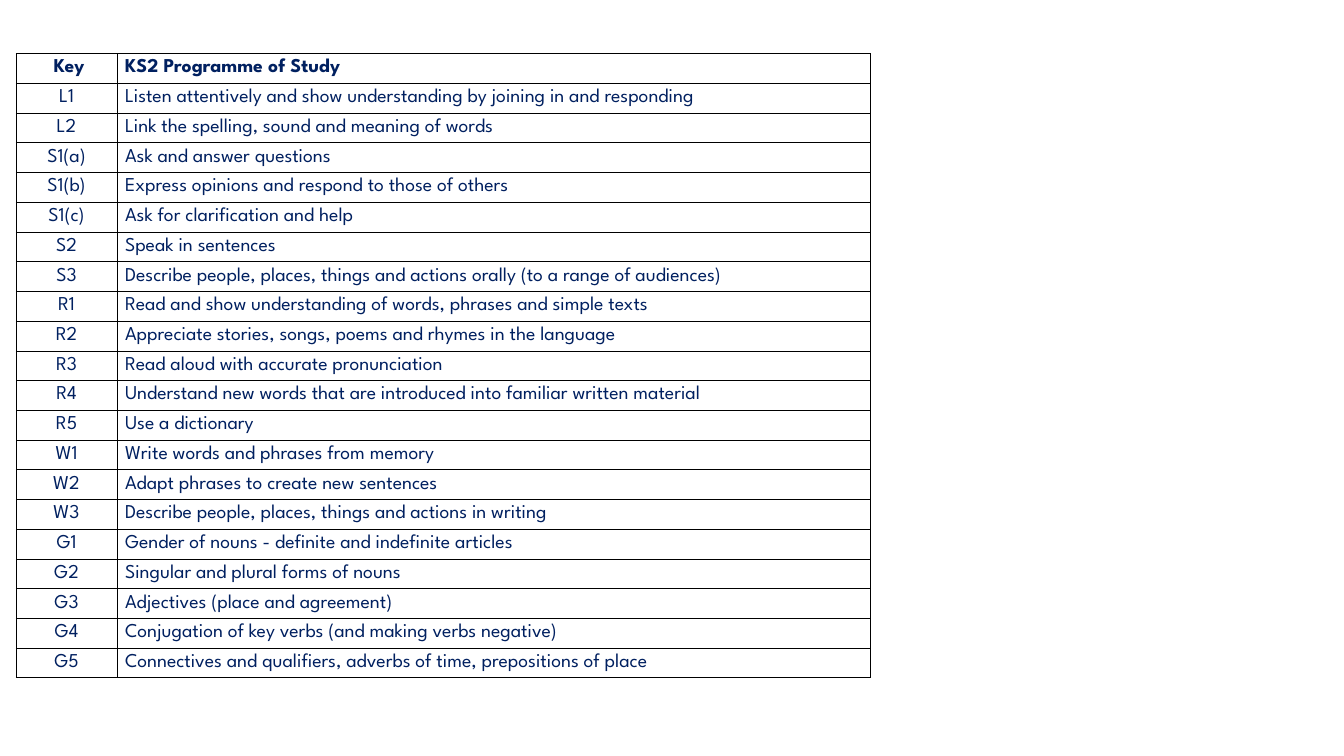
from lxml import etree
from pptx import Presentation
from pptx.dml.color import RGBColor
from pptx.enum.text import MSO_ANCHOR, PP_ALIGN
from pptx.oxml.ns import qn
from pptx.util import Inches, Pt

CENTER, LEFT = PP_ALIGN.CENTER, PP_ALIGN.LEFT
MIDDLE = MSO_ANCHOR.MIDDLE
FONT = "League Spartan"
COLORS = {"text": "002060", "border": "000000"}
KEY_WIDTH = 1
TEXT_INDENT = 0.08

HEADER = (" Key", "KS2 Programme of Study")
STATEMENTS = [
    ("L1", "Listen attentively and show understanding by joining in and responding"),
    ("L2", "Link the spelling, sound and meaning of words"),
    ("S1(a)", "Ask and answer questions"),
    ("S1(b)", "Express opinions and respond to those of others"),
    ("S1(c)", "Ask for clarification and help"),
    ("S2", "Speak in sentences"),
    ("S3", "Describe people, places, things and actions orally (to a range of audiences)"),
    ("R1", "Read and show understanding of words, phrases and simple texts"),
    ("R2", "Appreciate stories, songs, poems and rhymes in the language"),
    ("R3", "Read aloud with accurate pronunciation"),
    ("R4", "Understand new words that are introduced into familiar written material"),
    ("R5", "Use a dictionary"),
    ("W1", "Write words and phrases from memory"),
    ("W2", "Adapt phrases to create new sentences"),
    ("W3", "Describe people, places, things and actions in writing"),
    ("G1", "Gender of nouns - definite and indefinite articles"),
    ("G2", "Singular and plural forms of nouns"),
    ("G3", "Adjectives (place and agreement)"),
    ("G4", "Conjugation of key verbs (and making verbs negative)"),
    ("G5", "Connectives and qualifiers, adverbs of time, prepositions of place"),
]


def write_text(tf, text, size=14, bold=False, align=LEFT, color="text"):
    p = tf.paragraphs[0]
    p.alignment = align
    r = p.add_run()
    r.text = text
    r.font.name = FONT
    r.font.size = Pt(size)
    r.font.bold = bold
    r.font.color.rgb = RGBColor.from_string(COLORS[color])


def add_borders(cell, width=0.25):
    tc_pr = cell._tc.get_or_add_tcPr()
    for side in ("lnL", "lnR", "lnT", "lnB"):
        ln = etree.SubElement(tc_pr, qn(f"a:{side}"), w=str(Pt(width)))
        fill = etree.SubElement(ln, qn("a:solidFill"))
        etree.SubElement(fill, qn("a:srgbClr"), val=COLORS["border"])


def format_cell(cell, indent):
    cell.vertical_anchor = MIDDLE
    cell.margin_left = Inches(indent)
    cell.margin_right = cell.margin_top = cell.margin_bottom = 0
    add_borders(cell)
    cell.fill.background()


def add_study_table(slide, left, top, width, height):
    rows = [HEADER] + STATEMENTS
    table = slide.shapes.add_table(
        len(rows), 2, Inches(left), Inches(top), Inches(width), Inches(height)
    ).table
    table.horz_banding = False
    table.columns[0].width = Inches(KEY_WIDTH)
    table.columns[1].width = Inches(width - KEY_WIDTH)
    for i, row in enumerate(rows):
        table.rows[i].height = Inches(height / len(rows))
        for j, (text, align, indent) in enumerate(
            zip(row, (CENTER, LEFT), (0, TEXT_INDENT))
        ):
            cell = table.cell(i, j)
            format_cell(cell, indent)
            write_text(cell.text_frame, text, bold=i == 0, align=align)


def main():
    prs = Presentation()
    prs.slide_width = Inches(13.33)
    prs.slide_height = Inches(7.5)
    slide = prs.slides.add_slide(prs.slide_layouts[6])
    add_study_table(slide, 0.16, 0.53, 8.47, 6.2)
    prs.save("out.pptx")


if __name__ == "__main__":
    main()
